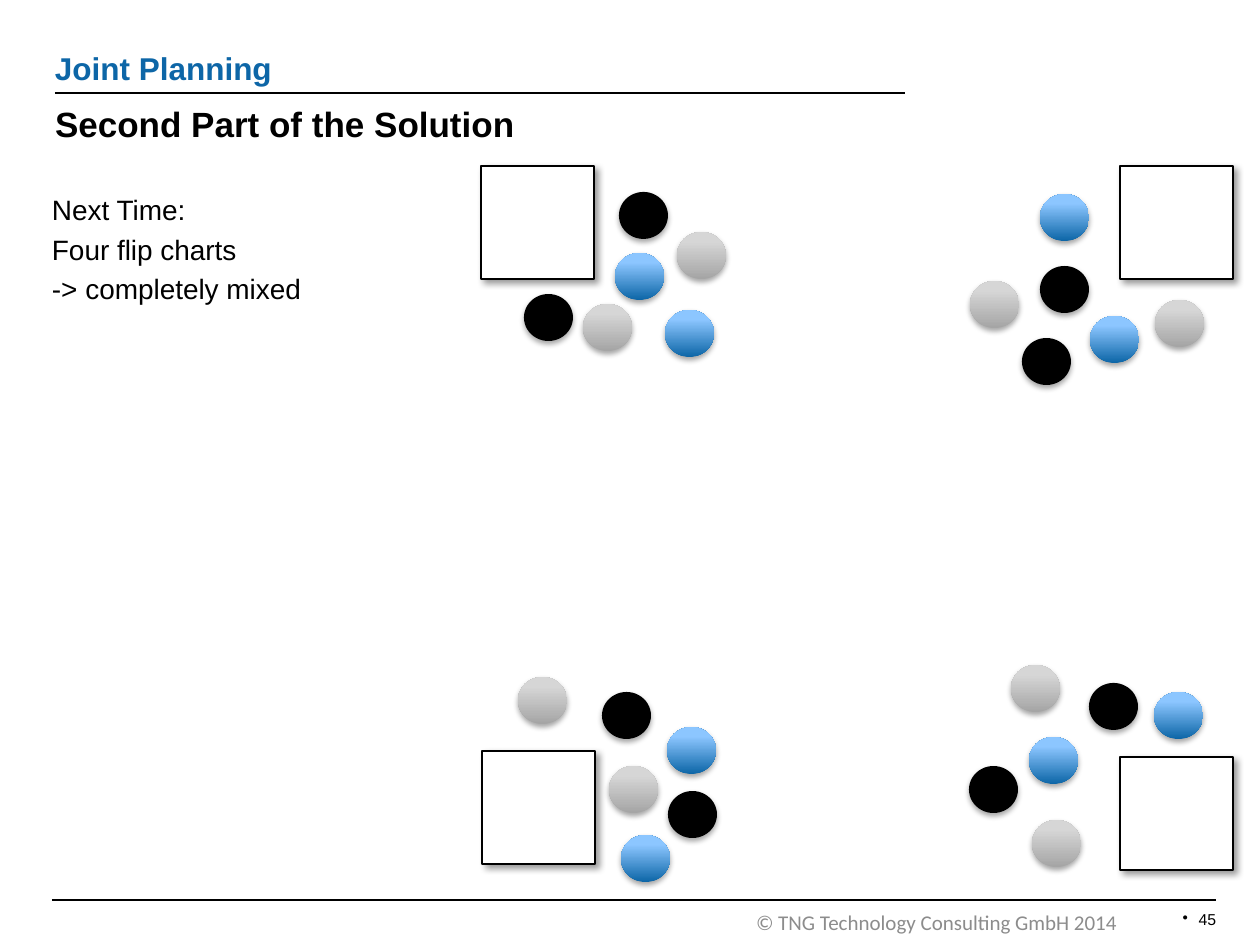
from dataclasses import dataclass

from lxml import etree
from pptx import Presentation
from pptx.dml.color import RGBColor
from pptx.enum.shapes import MSO_CONNECTOR, MSO_SHAPE
from pptx.enum.text import MSO_ANCHOR, MSO_AUTO_SIZE, PP_ALIGN
from pptx.oxml.ns import qn
from pptx.util import Emu, Pt

LINE = MSO_CONNECTOR.STRAIGHT
OVAL, RECT = MSO_SHAPE.OVAL, MSO_SHAPE.RECTANGLE
TOP, BOTTOM = MSO_ANCHOR.TOP, MSO_ANCHOR.BOTTOM
LEFT, RIGHT = PP_ALIGN.LEFT, PP_ALIGN.RIGHT
GROW = MSO_AUTO_SIZE.SHAPE_TO_FIT_TEXT
SCALE = 914400 / 126


@dataclass(frozen=True)
class Style:
    size: int
    color: str
    font: str = "Arial"
    bold: bool = False


@dataclass(frozen=True)
class Shadow:
    alpha: int  # percent
    blur: float  # points
    dist: float  # points
    angle: int  # degrees


@dataclass(frozen=True)
class Theme:
    black: str = "000000"
    white: str = "FFFFFF"
    grey: tuple = ((0, "A5A5A5"), (80, "D6D6D6"), (100, "D7D7D7"))
    blue: tuple = ((0, "0D66A7"), (80, "8CC6FF"), (100, "8EC7FF"))
    topic: Style = Style(18, "0D66A7", bold=True)
    title: Style = Style(20, "000000", bold=True)
    body: Style = Style(16, "000000")
    foot: Style = Style(12, "8C8C8C", "Calibri")
    page: Style = Style(9, "000000")
    soft: Shadow = Shadow(35, 3.15, 1.8, 90)
    drop: Shadow = Shadow(40, 4, 3, 45)


@dataclass(frozen=True)
class Group:
    """A flip chart and the people around it, by colour."""
    chart: tuple
    grey: tuple
    black: tuple
    blue: tuple


THEME = Theme()
BALL = (49, 47)
CHART = (113, 113)
GROUPS = (
    Group((481, 166), ((677, 232), (583, 304)),
          ((524, 294), (619, 192)), ((665, 310), (615, 253))),
    Group((1120, 166), ((970, 281), (1155, 300)),
          ((1040, 266), (1022, 338)), ((1040, 194), (1090, 316))),
    Group((482, 751), ((609, 766), (518, 677)),
          ((602, 692), (668, 791)), ((667, 727), (621, 835))),
    Group((1120, 757), ((1011, 665), (1032, 820)),
          ((969, 766), (1089, 683)), ((1029, 737), (1154, 692))),
)


def px(n: int) -> Emu:
    return Emu(round(n * SCALE))


def rgb(code: str) -> RGBColor:
    return RGBColor.from_string(code)


def place(shape, box: tuple) -> None:
    shape.left, shape.top, shape.width, shape.height = map(px, box)


def write(shape, lines: tuple, style: Style, anchor=TOP) -> None:
    frame = shape.text_frame
    frame.word_wrap, frame.auto_size = True, GROW
    frame.vertical_anchor = anchor
    frame.margin_left = frame.margin_right = 0
    frame.margin_top = frame.margin_bottom = 0
    frame.text = "\n".join(lines)
    for para in frame.paragraphs:
        para.alignment = LEFT
        font = para.font
        font.name, font.size, font.bold = style.font, Pt(style.size), style.bold
        font.color.rgb = rgb(style.color)


def indent(para, mark: str, hang: int = 0) -> None:
    props = para._p.get_or_add_pPr()
    props.set("marL", str(px(hang)))
    props.set("indent", str(-px(hang)))
    if mark:
        etree.SubElement(props, qn("a:buChar")).set("char", mark)
    else:
        etree.SubElement(props, qn("a:buNone"))


def add_text(slide, box: tuple, text: str, style: Style, anchor=TOP):
    shape = slide.shapes.add_textbox(*map(px, box))
    write(shape, (text,), style, anchor)
    return shape


def add_rule(slide, left: int, right: int, y: int) -> None:
    rule = slide.shapes.add_connector(LINE, px(left), px(y), px(right), px(y))
    rule.line.color.rgb = rgb(THEME.black)
    rule.line.width = Pt(1)
    etree.SubElement(rule._element.spPr, qn("a:effectLst"))


def add_stop(parent, pos: int, code: str) -> None:
    stop = etree.SubElement(parent, qn("a:gs"), pos=str(pos * 1000))
    etree.SubElement(stop, qn("a:srgbClr"), val=code)


def cast(shape, shadow: Shadow) -> None:
    shape.shadow.inherit = False
    effects = shape._element.spPr.find(qn("a:effectLst"))
    outer = etree.SubElement(
        effects, qn("a:outerShdw"), blurRad=str(Pt(shadow.blur)),
        dist=str(Pt(shadow.dist)), dir=str(shadow.angle * 60000), rotWithShape="0")
    tint = etree.SubElement(outer, qn("a:srgbClr"), val=THEME.black)
    etree.SubElement(tint, qn("a:alpha"), val=str(shadow.alpha * 1000))


def add_ball(slide, spot: tuple, paint: str | tuple) -> None:
    ball = slide.shapes.add_shape(OVAL, *map(px, spot + BALL))
    if isinstance(paint, str):
        ball.fill.solid()
        ball.fill.fore_color.rgb = rgb(paint)
    else:
        ball.fill.gradient()
        ball.fill.gradient_angle = 90
        stops = ball._element.spPr.find(".//" + qn("a:gsLst"))
        stops.clear()
        for pos, code in paint:
            add_stop(stops, pos, code)
    ball.line.fill.background()
    cast(ball, THEME.soft)


def add_chart(slide, spot: tuple) -> None:
    sheet = slide.shapes.add_shape(RECT, *map(px, spot + CHART))
    sheet.fill.solid()
    sheet.fill.fore_color.rgb = rgb(THEME.white)
    sheet.line.color.rgb = rgb(THEME.black)
    sheet.line.width = Pt(0.75)
    cast(sheet, THEME.drop)


def main() -> None:
    deck = Presentation()
    deck.slide_width, deck.slide_height = px(1260), px(945)
    slide = deck.slides.add_slide(deck.slide_layouts[1])

    # Rules and footer
    add_rule(slide, 52, 1216, 900)
    add_rule(slide, 55, 905, 93)
    add_text(slide, (756, 910, 411, 25),
             "© TNG Technology Consulting GmbH 2014", THEME.foot)
    page = add_text(slide, (1169, 910, 47, 18), "", THEME.page)
    para = page.text_frame.paragraphs[0]
    para._p.remove(para._p.pPr)
    indent(para, "•", 16)
    para.text = "45"
    para.alignment = RIGHT
    para.font.name, para.font.size = THEME.page.font, Pt(THEME.page.size)
    para.font.color.rgb = rgb(THEME.page.color)

    # Headings and body
    add_text(slide, (55, 49, 843, 38), "Joint Planning", THEME.topic, BOTTOM)
    title, body = slide.placeholders
    place(title, (55, 102, 853, 43))
    write(title, ("Second Part of the Solution",), THEME.title)
    place(body, (52, 193, 1163, 116))
    body.text_frame.text = "\n".join(
        ("Next Time:", "Four flip charts", "-> completely mixed"))
    lines = tuple(para.text for para in body.text_frame.paragraphs)
    write(body, lines, THEME.body)
    for para in body.text_frame.paragraphs:
        props = para._p.get_or_add_pPr()
        props.set("marL", "0")
        props.set("indent", "0")
        props.insert(0, etree.Element(qn("a:buNone")))
    body.text_frame.paragraphs[0].space_before = Pt(0)

    # Mixed groups around four flip charts
    for group in GROUPS:
        for spots, paint in ((group.grey, THEME.grey), (group.black, THEME.black),
                             (group.blue, THEME.blue)):
            for spot in spots:
                add_ball(slide, spot, paint)
        add_chart(slide, group.chart)

    deck.save("out.pptx")


if __name__ == "__main__":
    main()
